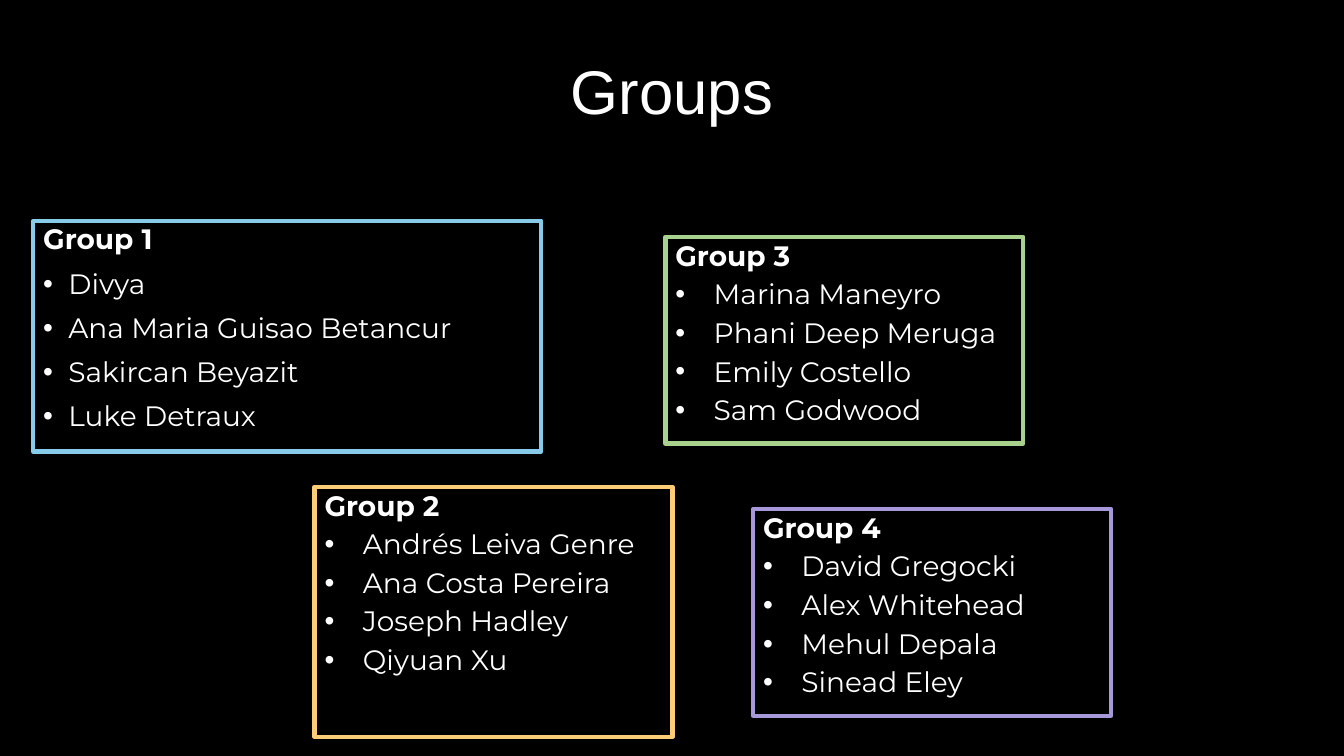
from dataclasses import dataclass

from lxml import etree
from pptx import Presentation
from pptx.dml.color import RGBColor
from pptx.enum.shapes import MSO_SHAPE
from pptx.enum.text import MSO_ANCHOR, PP_ALIGN
from pptx.oxml.ns import qn
from pptx.slide import Slide
from pptx.text.text import TextFrame
from pptx.util import Inches, Pt

RECTANGLE = MSO_SHAPE.RECTANGLE
TOP, MIDDLE = MSO_ANCHOR.TOP, MSO_ANCHOR.MIDDLE
LEFT, CENTER = PP_ALIGN.LEFT, PP_ALIGN.CENTER
TITLE_ONLY = 5
COLORS = {
    "background": "000000",
    "text": "FFFFFF",
    "blue": "86CCE8",
    "yellow": "FCCD76",
    "green": "A9D18E",
    "purple": "A799D9",
}


@dataclass
class Group:
    """A framed list of group members."""

    name: str
    members: list[str]
    color: str
    left: float
    top: float
    width: float = 3.55
    height: float = 2.05
    indent: float = 0.38
    before: float = 0
    after: float = 6


GROUPS = [
    Group("Group 1", ["Divya", "Ana Maria Guisao Betancur", "Sakircan Beyazit", "Luke Detraux"],
          "blue", 0.33, 2.19, width=5.04, height=2.29, indent=0.25, before=10, after=0),
    Group("Group 2", ["Andrés Leiva Genre", "Ana Costa Pereira", "Joseph Hadley", "Qiyuan Xu"],
          "yellow", 3.12, 4.83, height=2.48),
    Group("Group 3", ["Marina Maneyro", "Phani Deep Meruga", "Emily Costello", "Sam Godwood"],
          "green", 6.6, 2.35),
    Group("Group 4", ["David Gregocki", "Alex Whitehead", "Mehul Depala", "Sinead Eley"],
          "purple", 7.47, 5.05),
]


def rgb(name: str) -> RGBColor:
    """Return a named color."""
    return RGBColor.from_string(COLORS[name])


def write_text(frame: TextFrame, text: str, *, first: bool = False, font: str = "Montserrat",
               size: float = 20, bold: bool = False, align: PP_ALIGN = LEFT,
               indent: float = 0, before: float = 0, after: float = 0) -> None:
    """Write one paragraph, bulleted when it has an indent."""
    paragraph = frame.paragraphs[0] if first else frame.add_paragraph()
    if indent:
        properties = paragraph._p.get_or_add_pPr()
        properties.set("marL", str(Inches(indent)))
        properties.set("indent", str(-Inches(indent)))
        etree.SubElement(properties, qn("a:buFont"), typeface="Arial")
        etree.SubElement(properties, qn("a:buChar"), char="•")
    paragraph.alignment = align
    paragraph.line_spacing = 0.9
    paragraph.space_before = Pt(before)
    paragraph.space_after = Pt(after)
    run = paragraph.add_run()
    run.text = text
    run.font.name = font
    run.font.size = Pt(size)
    run.font.bold = bold
    run.font.color.rgb = rgb("text")


def add_title(slide: Slide, text: str) -> None:
    """Place and format the slide title."""
    title = slide.shapes.title
    title.left, title.top = Inches(0), Inches(0.21)
    title.width, title.height = Inches(13.33), Inches(1.45)
    title.text_frame.vertical_anchor = MIDDLE
    write_text(title.text_frame, text, first=True, font="Arial", size=44, align=CENTER)


def add_group(slide: Slide, group: Group) -> None:
    """Draw a group frame with its heading and members."""
    shape = slide.shapes.add_shape(RECTANGLE, Inches(group.left), Inches(group.top),
                                   Inches(group.width), Inches(group.height))
    shape.name = group.name
    shape.shadow.inherit = False
    shape.fill.background()
    shape.line.color.rgb = rgb(group.color)
    shape.line.width = Pt(3)
    frame = shape.text_frame
    frame.word_wrap = True
    frame.vertical_anchor = TOP
    write_text(frame, group.name, first=True, bold=True, after=group.after)
    for member in group.members:
        write_text(frame, member, indent=group.indent, before=group.before, after=group.after)


def main() -> None:
    """Build and save the groups slide."""
    presentation = Presentation()
    presentation.slide_width, presentation.slide_height = Inches(13.33), Inches(7.5)
    slide = presentation.slides.add_slide(presentation.slide_layouts[TITLE_ONLY])
    slide.background.fill.solid()
    slide.background.fill.fore_color.rgb = rgb("background")
    add_title(slide, "Groups")
    for group in GROUPS:
        add_group(slide, group)
    presentation.save("out.pptx")


if __name__ == "__main__":
    main()
